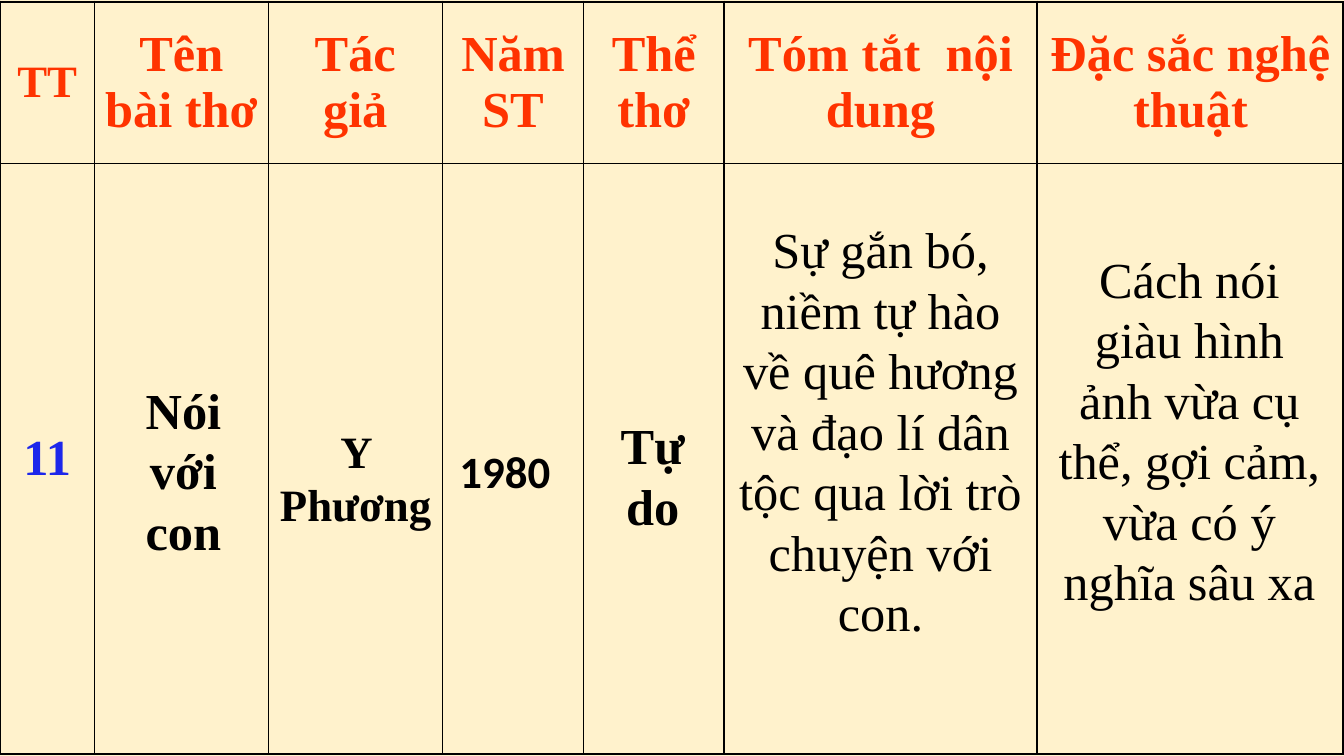
from lxml import etree
from pptx import Presentation
from pptx.dml.color import RGBColor
from pptx.enum.text import MSO_ANCHOR, MSO_AUTO_SIZE, PP_ALIGN
from pptx.oxml.ns import qn
from pptx.util import Pt

CENTER, LEFT = PP_ALIGN.CENTER, PP_ALIGN.LEFT
MIDDLE = MSO_ANCHOR.MIDDLE
GROW = MSO_AUTO_SIZE.SHAPE_TO_FIT_TEXT

CREAM = RGBColor(0xFF, 0xF2, 0xCC)
BLACK = RGBColor(0, 0, 0)
RED = RGBColor(0xFF, 0x33, 0x00)
BLUE = RGBColor(0x1D, 0x27, 0xEB)

SERIF, SANS = "Times New Roman", "Calibri"
THIN, THICK = 1, 2.25

COLUMN_WIDTHS = [67.6, 124, 124.4, 101, 100.2, 223.6, 219.2]
ROW_HEIGHTS = [115.2, 422]
HEADINGS = ["TT", "Tên bài thơ", "Tác giả", "Năm ST", "Thể thơ",
            "Tóm tắt  nội dung", "Đặc sắc nghệ thuật"]

HEADING = {"size": Pt(36), "name": SERIF, "bold": True}
SMALL_HEADING = {**HEADING, "size": Pt(32)}
SANS_HEADING = {**SMALL_HEADING, "name": SANS}
BODY = {**HEADING, "bold": False}

SPACED = {"alignment": CENTER, "space_before": Pt(6)}
SPACED_LEFT = {**SPACED, "alignment": LEFT}
PLAIN = {"alignment": CENTER}

ENTRIES = [
    ("Nói với con", (72, 267.1, 118.1, 138.2), HEADING, SPACED, True),
    ("Y Phương", (188.6, 298.8, 131, 85), SMALL_HEADING, SPACED, True),
    ("1980", (321.1, 313.2, 89.3, 46.1), SANS_HEADING, SPACED_LEFT, False),
    ("Tự do", (418.3, 292.3, 95.8, 94.3), HEADING, SPACED, True),
    ("Sự gắn bó, niềm tự hào về quê hương và đạo lí dân tộc qua lời "
     "trò chuyện với con.", (520.6, 152.6, 216.7, 312.5), BODY, PLAIN, True),
    ("Cách nói giàu hình ảnh vừa cụ thể, gợi cảm, vừa có ý nghĩa sâu xa",
     (748.1, 173.5, 203, 312.5), BODY, PLAIN, True),
]


def assign(target, values):
    for name, value in values.items():
        setattr(target, name, value)


class PoemSlide:
    def __init__(self, page):
        self.page = page
        fill = page.background.fill
        fill.solid()
        fill.fore_color.rgb = CREAM

    def add_span(self, frame, text, font, layout, color):
        para = frame.paragraphs[0]
        assign(para, layout)
        span = para.add_run()
        span.text = text
        assign(span.font, font)
        span.font.color.rgb = color

    def text(self, text, bounds, font, layout, wrap):
        box = self.page.shapes.add_textbox(*map(Pt, bounds))
        assign(box.text_frame, {"word_wrap": wrap, "auto_size": GROW})
        self.add_span(box.text_frame, text, font, layout, BLACK)

    def border(self, cell, side, width):
        line = etree.SubElement(cell._tc.get_or_add_tcPr(), qn(f"a:ln{side}"),
                                w=str(Pt(width)))
        fill = etree.SubElement(line, qn("a:solidFill"))
        etree.SubElement(fill, qn("a:srgbClr"), val=str(BLACK))

    def table(self, left, top, widths, heights):
        frame = self.page.shapes.add_table(
            len(heights), len(widths), Pt(left), Pt(top),
            Pt(sum(widths)), Pt(sum(heights)))
        table = frame.table
        assign(table, {"first_row": False, "horz_banding": False})
        for column, width in zip(table.columns, widths):
            column.width = Pt(width)
        for row, height in zip(table.rows, heights):
            row.height = Pt(height)
        last_row, last_column = len(heights) - 1, len(widths) - 1
        for row in range(len(heights)):
            for column in range(len(widths)):
                cell = table.cell(row, column)
                cell.vertical_anchor = MIDDLE
                outer = {"L": column == 0, "R": column == last_column,
                         "T": row == 0, "B": row == last_row}
                for side, is_outer in outer.items():
                    self.border(cell, side, THICK if is_outer else THIN)
                cell.fill.background()
        return table


def main():
    deck = Presentation()
    deck.slide_width, deck.slide_height = Pt(960), Pt(540)
    slide = PoemSlide(deck.slides.add_slide(deck.slide_layouts[6]))
    table = slide.table(0, 1.4, COLUMN_WIDTHS, ROW_HEIGHTS)
    for column, heading in enumerate(HEADINGS):
        font = HEADING if column else SMALL_HEADING
        slide.add_span(table.cell(0, column).text_frame, heading, font, SPACED, RED)
    slide.add_span(table.cell(1, 0).text_frame, "11", HEADING, SPACED, BLUE)
    for entry in ENTRIES:
        slide.text(*entry)
    deck.save("out.pptx")


if __name__ == "__main__":
    main()
